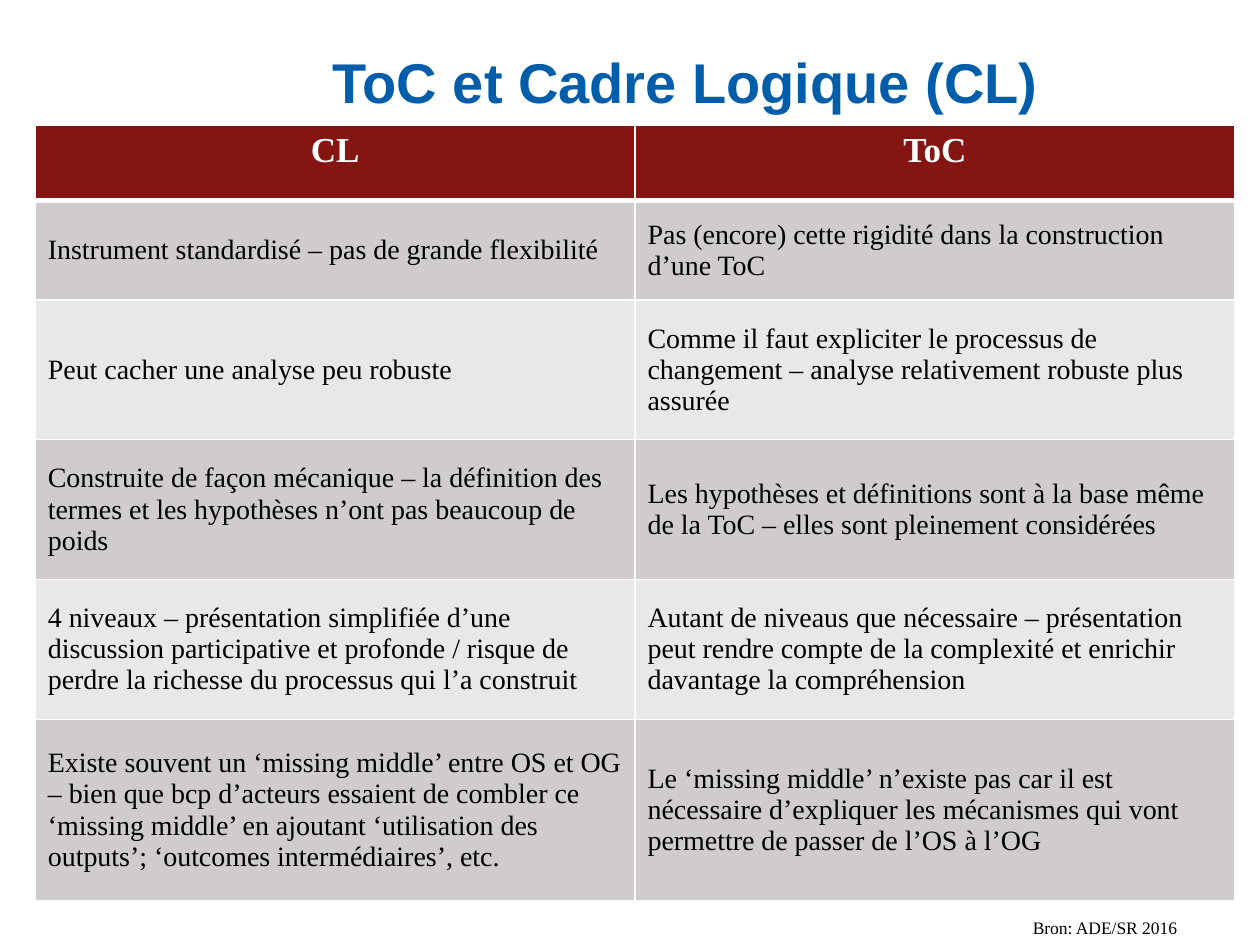
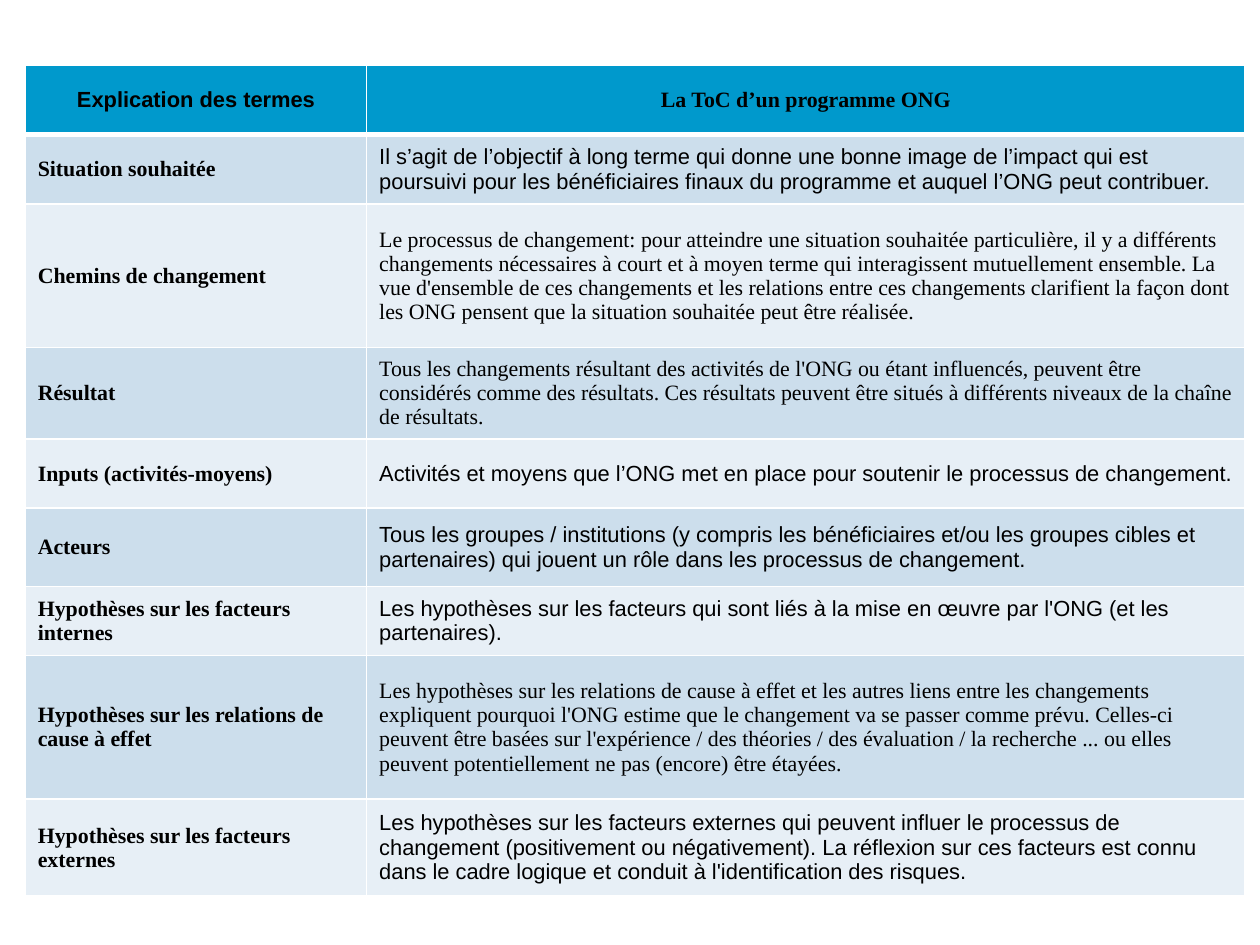
"""Build two slides comparing the logical framework with the theory of change."""
from dataclasses import dataclass

from lxml import etree
from pptx import Presentation
from pptx import util as u
from pptx.dml.color import RGBColor
from pptx.enum import text
from pptx.oxml import ns

SLIDE_WIDTH, SLIDE_HEIGHT = u.Inches(10), u.Inches(7.5)
SANS, SERIF = "Arial", "Times New Roman"
BLACK, WHITE, TITLE_BLUE = "000000", "FFFFFF", "005DAA"
THIN, THICK = 1, 3
TITLE_LAYOUT, BLANK_LAYOUT = 5, 6


@dataclass(frozen=True)
class Row:
    """One table row; the height is a percentage of the slide height."""
    height: float
    left: str
    right: str
    left_font: str = SERIF
    right_font: str = SERIF


@dataclass(frozen=True)
class TableStyle:
    """Colours and type of one table."""
    header_fill: str
    bands: tuple[str, str]
    header_color: str
    header_size: float
    body_size: float
    header_anchor: text.MSO_ANCHOR
    bold_labels: bool


@dataclass(frozen=True)
class Box:
    """A frame in percentages of the slide's width and height."""
    left: float
    top: float
    width: float
    height: float

    def lengths(self) -> tuple[int, int, int, int]:
        """Return the left, top, width and height as lengths."""
        return across(self.left), down(self.top), across(self.width), down(self.height)


FRAMEWORK_STYLE = TableStyle("841512", ("D0CCCD", "E9E7E8"), WHITE, 20, 16,
                             text.MSO_ANCHOR.TOP, False)
TERMS_STYLE = TableStyle("0099CC", ("CCDEEC", "E7EFF6"), BLACK, 12.5, 12.5,
                         text.MSO_ANCHOR.MIDDLE, True)

FRAMEWORK_ROWS = [
    Row(8, "CL", "ToC"),
    Row(10.53, "Instrument standardisé – pas de grande flexibilité",
        "Pas (encore) cette rigidité dans la construction d’une ToC"),
    Row(14.8, "Peut cacher une analyse peu robuste",
        "Comme il faut expliciter le processus de changement – analyse relativement "
        "robuste plus assurée"),
    Row(14.8, "Construite de façon mécanique – la définition des termes et les hypothèses "
        "n’ont pas beaucoup de poids",
        "Les hypothèses et définitions sont à la base même de la ToC – elles sont "
        "pleinement considérées"),
    Row(14.8, "4 niveaux – présentation simplifiée d’une discussion participative et "
        "profonde / risque de perdre la richesse du processus qui l’a construit",
        "Autant de niveaus que nécessaire – présentation peut rendre compte de la "
        "complexité et enrichir davantage la compréhension"),
    Row(19.2, "Existe souvent un ‘missing middle’ entre OS et OG – bien que bcp d’acteurs "
        "essaient de combler ce ‘missing middle’ en ajoutant ‘utilisation des outputs’; "
        "‘outcomes intermédiaires’, etc.",
        "Le ‘missing middle’ n’existe pas car il est nécessaire d’expliquer les "
        "mécanismes qui vont permettre de passer de l’OS à l’OG"),
]

TERMS_ROWS = [
    Row(7.33, "Explication des termes", "La ToC d’un programme ONG", left_font=SANS),
    Row(7.33, "Situation souhaitée",
        "Il s’agit de l’objectif à long terme qui donne une bonne image de l’impact qui "
        "est poursuivi pour les bénéficiaires finaux du programme et auquel l’ONG peut "
        "contribuer.", right_font=SANS),
    Row(15.2, "Chemins de changement",
        "Le processus de changement: pour atteindre une situation souhaitée particulière, "
        "il y a différents changements nécessaires à court et à moyen terme qui "
        "interagissent mutuellement ensemble. La vue d'ensemble de ces changements et les "
        "relations entre ces changements clarifient la façon dont les ONG pensent que la "
        "situation souhaitée peut être réalisée."),
    Row(9.6, "Résultat",
        "Tous les changements résultant des activités de l'ONG ou étant influencés, "
        "peuvent être considérés comme des résultats. Ces résultats peuvent être situés à "
        "différents niveaux de la chaîne de résultats."),
    Row(7.33, "Inputs (activités-moyens)",
        "Activités et moyens que l’ONG met en place pour soutenir le processus de "
        "changement.", right_font=SANS),
    Row(8.27, "Acteurs",
        "Tous les groupes / institutions (y compris les bénéficiaires et/ou les groupes "
        "cibles et partenaires) qui jouent un rôle dans les processus de changement.",
        right_font=SANS),
    Row(7.33, "Hypothèses sur les facteurs internes",
        "Les hypothèses sur les facteurs qui sont liés à la mise en œuvre par l'ONG (et "
        "les partenaires).", right_font=SANS),
    Row(15.2, "Hypothèses sur les relations de cause à effet",
        "Les hypothèses sur les relations de cause à effet et les autres liens entre les "
        "changements expliquent pourquoi l'ONG estime que le changement va se passer comme "
        "prévu. Celles-ci peuvent être basées sur l'expérience / des théories / des "
        "évaluation / la recherche ... ou elles peuvent potentiellement ne pas (encore) "
        "être étayées."),
    Row(10.27, "Hypothèses sur les facteurs externes",
        "Les hypothèses sur les facteurs externes qui peuvent influer le processus de "
        "changement (positivement ou négativement). La réflexion sur ces facteurs est "
        "connu dans le cadre logique et conduit à l'identification des risques.",
        right_font=SANS),
]


def across(percent: float) -> int:
    """Return a percentage of the slide width."""
    return round(SLIDE_WIDTH * percent / 100)


def down(percent: float) -> int:
    """Return a percentage of the slide height."""
    return round(SLIDE_HEIGHT * percent / 100)


def rgb(value: str) -> RGBColor:
    """Turn a hex string into a colour."""
    return RGBColor.from_string(value)


def write(frame, words: str, font: str, size: float, color: str, bold: bool,
          align: text.PP_ALIGN) -> None:
    """Put one formatted paragraph in a text frame."""
    frame.text = words
    paragraph = frame.paragraphs[0]
    paragraph.alignment = align
    for run in paragraph.runs:
        run.font.name, run.font.size, run.font.bold = font, u.Pt(size), bold
        run.font.color.rgb = rgb(color)


def add_borders(cell, top: float, bottom: float) -> None:
    """Draw white lines on the four sides of a cell."""
    properties = cell._tc.get_or_add_tcPr()
    widths = {"a:lnL": THIN, "a:lnR": THIN, "a:lnT": top, "a:lnB": bottom}
    for position, (tag, width) in enumerate(widths.items()):
        line = etree.Element(ns.qn(tag), w=str(u.Pt(width)))
        fill = etree.SubElement(line, ns.qn("a:solidFill"))
        etree.SubElement(fill, ns.qn("a:srgbClr"), val=WHITE)
        properties.insert(position, line)


def add_comparison(slide, box: Box, columns: tuple[float, float], rows: list[Row],
                   style: TableStyle) -> None:
    """Add a two-column table with a header and banded rows."""
    table = slide.shapes.add_table(len(rows), len(columns), *box.lengths()).table
    table.first_row = table.horz_banding = False
    for column, width in zip(table.columns, columns):
        column.width = across(width)
    for index, row in enumerate(rows):
        table.rows[index].height = down(row.height)
        header = index == 0
        fill = style.header_fill if header else style.bands[(index - 1) % 2]
        contents = ((row.left, row.left_font), (row.right, row.right_font))
        for position, (words, font) in enumerate(contents):
            cell = table.cell(index, position)
            cell.fill.solid()
            cell.fill.fore_color.rgb = rgb(fill)
            cell.vertical_anchor = style.header_anchor if header else text.MSO_ANCHOR.MIDDLE
            add_borders(cell, THICK if index == 1 else THIN, THICK if header else THIN)
            write(cell.text_frame, words, font,
                  style.header_size if header else style.body_size,
                  style.header_color if header else BLACK,
                  header or (style.bold_labels and position == 0),
                  text.PP_ALIGN.CENTER if header else text.PP_ALIGN.LEFT)


def add_title(slide, box: Box, words: str) -> None:
    """Place and format the slide title."""
    title = slide.shapes.title
    title.left, title.top, title.width, title.height = box.lengths()
    title.text_frame.vertical_anchor = text.MSO_ANCHOR.BOTTOM
    write(title.text_frame, words, SANS, 32, TITLE_BLUE, True, text.PP_ALIGN.LEFT)


def add_source(slide, box: Box, words: str) -> None:
    """Add the source line below the table."""
    frame = slide.shapes.add_textbox(*box.lengths()).text_frame
    frame.word_wrap = True
    write(frame, words, SERIF, 10, BLACK, False, text.PP_ALIGN.RIGHT)


def main() -> None:
    """Build and save the presentation."""
    presentation = Presentation()
    presentation.slide_width, presentation.slide_height = SLIDE_WIDTH, SLIDE_HEIGHT
    layouts = presentation.slide_layouts

    framework = presentation.slides.add_slide(layouts[TITLE_LAYOUT])
    add_title(framework, Box(25.4, 2.8, 75, 10), "ToC et Cadre Logique (CL)")
    add_comparison(framework, Box(2.8, 13.2, 95.2, 82.13), (47.6, 47.6),
                   FRAMEWORK_ROWS, FRAMEWORK_STYLE)
    add_source(framework, Box(75.7, 96.4, 18.7, 3.6), "Bron: ADE/SR 2016")

    terms = presentation.slides.add_slide(layouts[BLANK_LAYOUT])
    add_comparison(terms, Box(2, 6.93, 96.8, 87.86), (27.1, 69.7), TERMS_ROWS, TERMS_STYLE)

    presentation.save("out.pptx")


if __name__ == "__main__":
    main()
